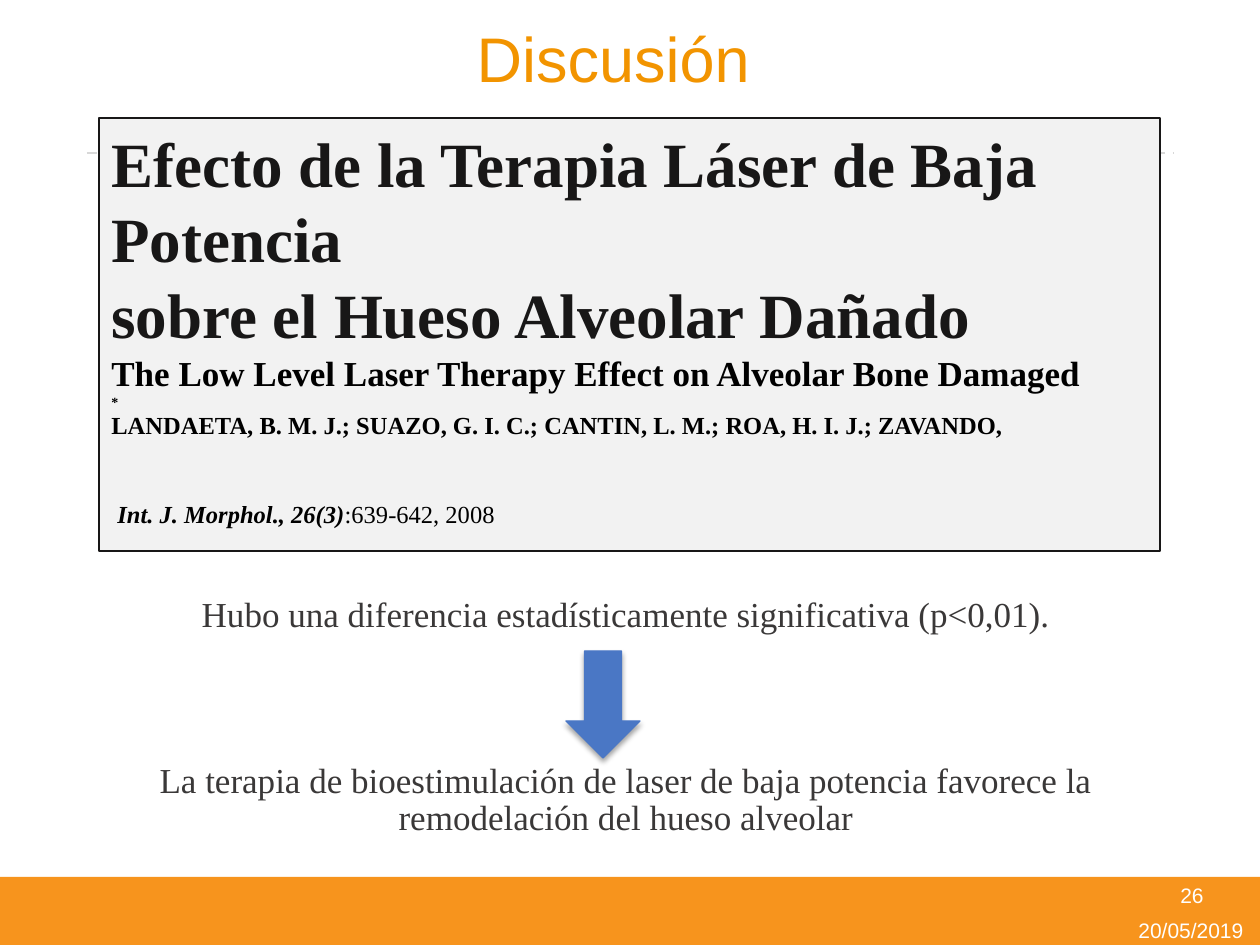
from pptx import Presentation
from pptx.dml.color import RGBColor
from pptx.enum.dml import MSO_LINE
from pptx.enum.shapes import MSO_CONNECTOR as Link, MSO_SHAPE as Form
from pptx.enum.text import MSO_ANCHOR as Anchor, PP_ALIGN as Align
from pptx.oxml.ns import qn
from pptx.util import Pt
from lxml.etree import SubElement

PX = 914400 / 126
HUES = {
    "orange": "F7941D", "title": "F29400", "white": "FFFFFF",
    "rule": "D8D8D8", "panel": "F2F2F2", "ink": "181717",
    "black": "000000", "gray": "3A3838", "blue": "4A77C5",
}
SANS, SERIF = "Arial", "Times New Roman"


def emu(*sizes):
    return [round(size * PX) for size in sizes]


def hue(name):
    return RGBColor.from_string(HUES[name])


class Deck:
    def __init__(self, wide, high):
        self.show = Presentation()
        self.show.slide_width, self.show.slide_height = emu(wide, high)
        self.slide = self.show.slides.add_slide(self.show.slide_layouts[6])

    def shape(self, form, box, fill, line=None):
        item = self.slide.shapes.add_shape(form, *emu(*box))
        item.shadow.inherit = False
        item.fill.solid()
        item.fill.fore_color.rgb = hue(fill)
        if line:
            item.line.color.rgb = hue(line)
            item.line.width = Pt(0.75)
        else:
            item.line.fill.background()
        return item

    def shade(self, item, blur, dist, alpha):
        effects = item._element.spPr.find(qn("a:effectLst"))
        outer = SubElement(effects, qn("a:outerShdw"), blurRad=str(Pt(blur)),
                           dist=str(Pt(dist)), dir="5400000", rotWithShape="0")
        color = SubElement(outer, qn("a:srgbClr"), val=HUES["black"])
        SubElement(color, qn("a:alpha"), val=str(alpha * 1000))

    def rule(self, left, right, y, color):
        line = self.slide.shapes.add_connector(
            Link.STRAIGHT, *emu(left, y, right, y))
        line.line.color.rgb = hue(color)
        line.line.width = Pt(1.5)
        line.line.dash_style = MSO_LINE.DASH
        SubElement(line._element.spPr, qn("a:effectLst"))

    def frame(self, box):
        return self.slide.shapes.add_textbox(*emu(*box)).text_frame

    def fill_text(self, frame, paras, font, anchor=Anchor.TOP,
                  align=Align.CENTER, lead=None):
        """Each para: text, size, color, bold, space before, left indent."""
        frame.word_wrap = True
        frame.vertical_anchor = anchor
        frame.text = "\n".join(para[0] for para in paras)
        for para, (_, size, color, bold, gap, left) in zip(
                frame.paragraphs, paras):
            para.alignment = align
            if lead:
                para.line_spacing = lead
            if gap:
                para.space_before = Pt(gap)
            if left:
                props = para._p.get_or_add_pPr()
                props.set("marL", str(emu(left)[0]))
                props.set("indent", "0")
            for run in para.runs:
                face = run.font
                face.name, face.size, face.bold = font, Pt(size), bold
                face.color.rgb = hue(color)

    def label(self, box, text, size, color):
        self.fill_text(self.frame(box), [(text, size, color, False, 0, 0)],
                       SANS, Anchor.MIDDLE)


def main():
    deck = Deck(1260, 945)

    # Footer and title
    deck.shape(Form.RECTANGLE, (0, 877, 1260, 68), "orange")
    deck.label((1124, 917, 134, 27), "20/05/2019", 12, "white")
    deck.label((1126, 876, 132, 38), "26", 12, "white")
    deck.rule(87, 1173, 153, "rule")
    deck.label((79, 4, 1086, 106), "Discusión ", 36, "title")

    # Cited paper
    panel = deck.shape(Form.RECTANGLE, (99, 118, 1061, 433), "panel", "ink")
    paper = panel.text_frame
    deck.fill_text(paper, [
        ("Efecto de la Terapia Láser de Baja Potencia", 36, "ink", True, 0, 0),
        ("sobre el Hueso Alveolar Dañado", 36, "ink", True, 0, 0),
        ("The Low Level Laser Therapy Effect on Alveolar Bone Damaged",
         20, "black", True, 0, 0),
        ("*", 8, "black", True, 0, 0),
        ("LANDAETA, B. M. J.; SUAZO, G. I. C.; CANTIN, L. M.; "
         "ROA, H. I. J.; ZAVANDO,", 14, "black", True, 0, 0),
        ("Int. J. Morphol., 26(3)", 14, "black", True, 34, 6),
    ], SERIF, align=Align.LEFT)
    cite = paper.paragraphs[-1]
    cite.runs[0].font.italic = True
    pages = cite.add_run()
    pages.text = ":639-642, 2008"
    pages.font.name, pages.font.size = SERIF, Pt(14)
    pages.font.color.rgb = hue("black")

    # Finding and what follows from it
    deck.fill_text(deck.frame((79, 591, 1086, 257)), [
        ("Hubo una diferencia estadísticamente significativa (p<0,01).",
         20, "gray", False, 0, 8),
        ("La terapia de bioestimulación de laser de baja potencia favorece "
         "la remodelación del hueso alveolar", 20, "gray", False, 73, 8),
    ], SERIF, lead=0.9)
    arrow = deck.shape(Form.DOWN_ARROW, (566, 651, 74, 107), "blue", "blue")
    deck.shade(arrow, 3.1, 1.8, 35)

    deck.show.save("out.pptx")


if __name__ == "__main__":
    main()
